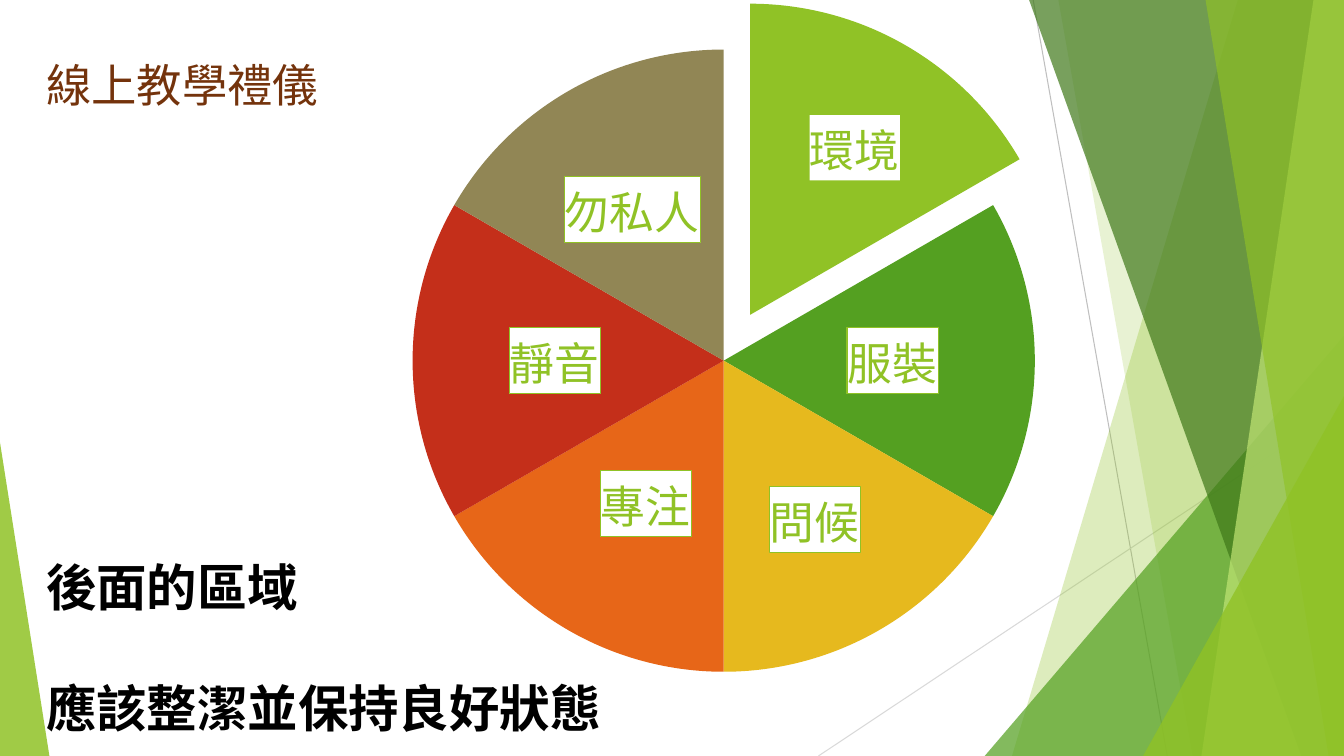
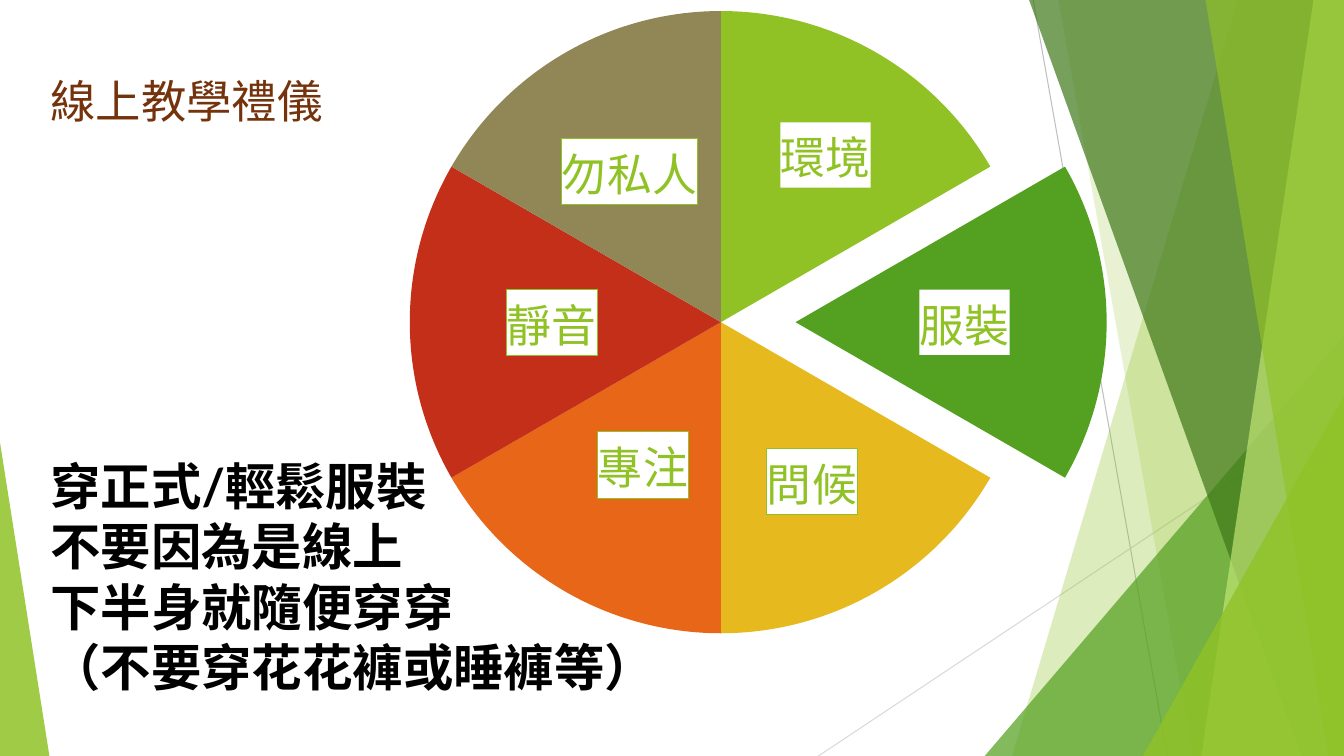
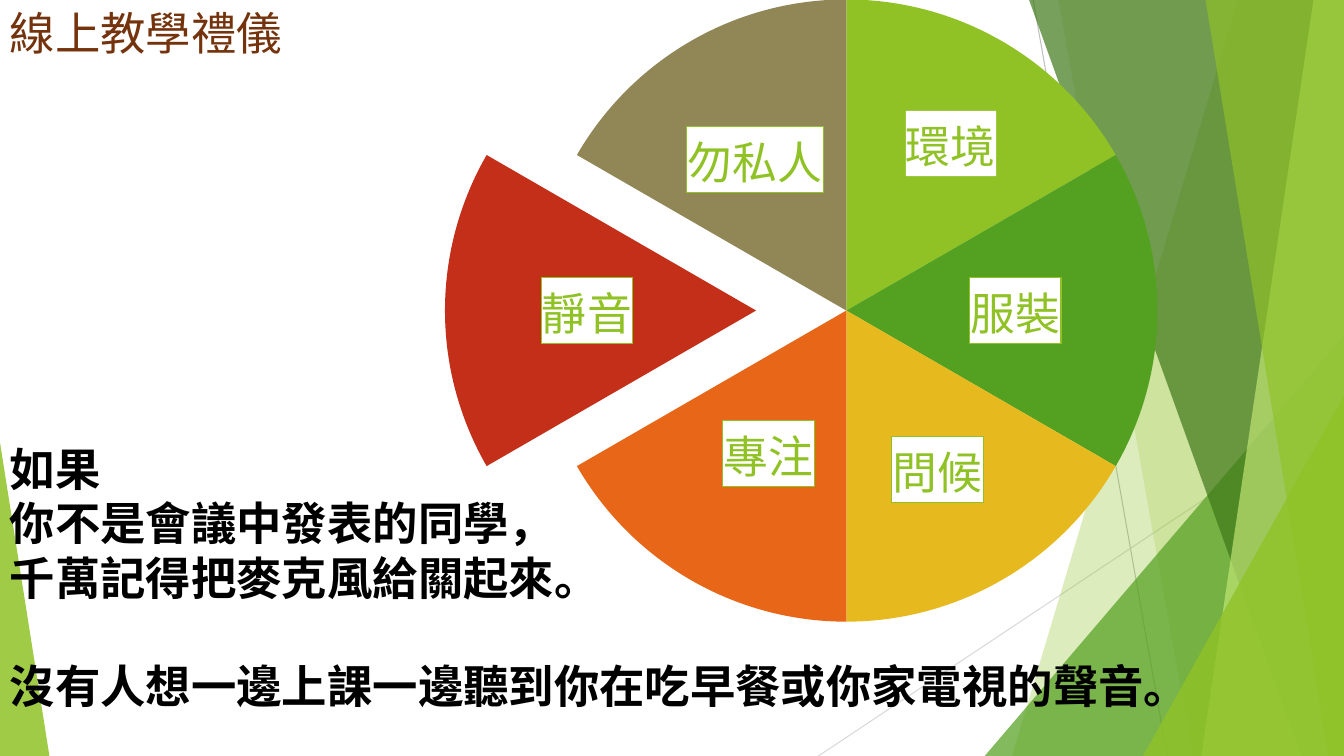
from dataclasses import dataclass
from typing import NamedTuple

from lxml import etree
from pptx import Presentation
from pptx.chart.data import CategoryChartData
from pptx.dml.color import RGBColor
from pptx.enum.chart import XL_CHART_TYPE
from pptx.enum.shapes import MSO_CONNECTOR, MSO_SHAPE
from pptx.enum.text import MSO_ANCHOR, MSO_AUTO_SIZE, PP_ALIGN
from pptx.oxml import parse_xml
from pptx.oxml.ns import nsdecls, qn
from pptx.util import Pt

PIE = XL_CHART_TYPE.PIE
STRAIGHT = MSO_CONNECTOR.STRAIGHT
TRIANGLE = MSO_SHAPE.ISOSCELES_TRIANGLE
TOP = MSO_ANCHOR.TOP
NO_FIT = MSO_AUTO_SIZE.NONE
LEFT = PP_ALIGN.LEFT

WIDTH, HEIGHT = 960, 540
CHART_WIDTH, CHART_HEIGHT = 960, 579
PLOT_WIDTH, PLOT_HEIGHT = 0.463, 0.768
TITLE_ONLY = 5
HEADING = "線上教學禮儀"
SHARE = 17


@dataclass(frozen=True)
class Theme:
    """Colours, font and type sizes of the deck."""
    font: str = "Lato"
    lime: str = "90C226"
    green: str = "54A021"
    forest: str = "3F7819"
    pale: str = "C0E474"
    gold: str = "E6B91E"
    orange: str = "E76618"
    red: str = "C42F1A"
    olive: str = "918655"
    brown: str = "74330C"
    black: str = "000000"
    white: str = "FFFFFF"
    grey: str = "BFBFBF"
    silver: str = "D9D9D9"
    heading_size: float = 32.4
    body_size: float = 36
    label_size: float = 32
    chart_size: float = 10
    leading: float = 1.2


THEME = Theme()


class Ray(NamedTuple):
    """A thin line of the backdrop."""
    start: tuple[float, float]
    end: tuple[float, float]
    colour: str


class Facet(NamedTuple):
    """A band from its slanted edge to the right side of the page."""
    top_x: float
    bottom_x: float
    colour: str
    opacity: int


class Corner(NamedTuple):
    """A triangle standing on the bottom of the page."""
    left: float
    width: float
    height: float
    apex: float
    colour: str
    opacity: int


class Slice(NamedTuple):
    """A pie slice and the shift of its label from the middle."""
    name: str
    colour: str
    shift_x: float
    shift_y: float


class Line(NamedTuple):
    """A line of advice with the number of lines left free above it."""
    text: str
    gap: int = 0


class Topic(NamedTuple):
    """One page: its open slice, chart place and text."""
    opened: int
    explosion: int
    chart_at: tuple[float, float]
    plot_at: tuple[float, float]
    heading_at: tuple[float, float]
    body_top: float
    body_size: float
    lines: tuple[Line, ...]


BACKDROP = (
    Ray((738, 0), (833.8, HEIGHT), THEME.grey),
    Ray((WIDTH, 290.2), (584.6, HEIGHT), THEME.silver),
    Facet(884.2, 722.9, THEME.lime, 30),
    Facet(756, 851.8, THEME.lime, 20),
    Corner(703.4, 256.6, 300.2, 1, THEME.green, 72),
    Facet(735.1, 929.5, THEME.forest, 70),
    Facet(938.2, 858.2, THEME.pale, 70),
    Facet(861.1, 949, THEME.lime, 65),
    Corner(816.5, 143.5, 257, 1, THEME.lime, 80),
    Corner(0, 35.3, 223.9, 0, THEME.lime, 85),
)

SLICES = (
    Slice("環境", THEME.lime, 0.02, -0.04),
    Slice("服裝", THEME.green, 0.01, 0),
    Slice("問候", THEME.gold, 0.01, 0.03),
    Slice("專注", THEME.orange, 0, 0.01),
    Slice("靜音", THEME.red, -0.01, 0),
    Slice("勿私人", THEME.olive, -0.01, -0.02),
)

TOPICS = (
    Topic(0, 17, (0, 0), (0.307, 0.061), (33, 40.5), 397, THEME.body_size, (
        Line("後面的區域"),
        Line("應該整潔並保持良好狀態", gap=1),
    )),
    Topic(1, 24, (-2, -27.5), (0.307, 0.061), (36, 52), 325, THEME.body_size, (
        Line("穿正式/輕鬆服裝"),
        Line("不要因為是線上"),
        Line("下半身就隨便穿穿"),
        Line("（不要穿花花褲或睡褲等）"),
    )),
    Topic(4, 29, (30, -70.5), (0.367, 0.121), (7, 4), 315, THEME.heading_size, (
        Line("如果"),
        Line("你不是會議中發表的同學，"),
        Line("千萬記得把麥克風給關起來。"),
        Line("沒有人想一邊上課一邊聽到你在吃早餐或你家電視的聲音。", gap=1),
    )),
)


def paint(shape, colour: str, opacity: int) -> None:
    """Give a shape a see-through fill without line or shadow."""
    shape.shadow.inherit = False
    shape.fill.solid()
    shape.fill.fore_color.rgb = RGBColor.from_string(colour)
    shape.line.fill.background()
    tint = shape.element.spPr.find(".//" + qn("a:srgbClr"))
    etree.SubElement(tint, qn("a:alpha")).set("val", str(opacity * 1000))


def draw_ray(group, ray: Ray) -> None:
    """Draw one thin line."""
    line = group.shapes.add_connector(STRAIGHT, *map(Pt, ray.start + ray.end))
    line.line.color.rgb = RGBColor.from_string(ray.colour)
    line.line.width = Pt(0.75)
    etree.SubElement(line.element.spPr, qn("a:effectLst"))


def draw_facet(group, facet: Facet) -> None:
    """Draw one slanted band."""
    outline = group.shapes.build_freeform(Pt(facet.top_x), 0)
    corners = ((WIDTH, 0), (WIDTH, HEIGHT), (facet.bottom_x, HEIGHT))
    outline.add_line_segments([(Pt(x), Pt(y)) for x, y in corners], close=True)
    paint(outline.convert_to_shape(), facet.colour, facet.opacity)


def draw_corner(group, corner: Corner) -> None:
    """Draw one corner triangle."""
    shape = group.shapes.add_shape(
        TRIANGLE, Pt(corner.left), Pt(HEIGHT - corner.height),
        Pt(corner.width), Pt(corner.height))
    shape.adjustments[0] = corner.apex
    paint(shape, corner.colour, corner.opacity)


def place_backdrop(page, layout) -> None:
    """Build the backdrop as a group and hand it to the shared layout."""
    painters = {Ray: draw_ray, Facet: draw_facet, Corner: draw_corner}
    group = page.shapes.add_group_shape()
    for part in BACKDROP:
        painters[type(part)](group, part)
    for number, properties in enumerate(group.element.iter(qn("p:cNvPr")), 100):
        properties.set("id", str(number))
    layout.shapes.element.append(group.element)


def add_text(frame, text: str, *, size: float, colour: str,
             bold: bool = False, gap: int = 0, first: bool = False) -> None:
    """Write one line of text as a paragraph."""
    para = frame.paragraphs[0] if first else frame.add_paragraph()
    para.alignment = LEFT
    para.line_spacing = Pt(size * THEME.leading)
    para.space_before = Pt(gap * size * THEME.leading)
    span = para.add_run()
    span.text = text
    span.font.name = THEME.font
    span.font.size = Pt(size)
    span.font.bold = bold
    span.font.color.rgb = RGBColor.from_string(colour)


def prepare_box(box, left: float, top: float, width: float, height: float):
    """Place a text shape, clear its margins and return its text frame."""
    box.left, box.top, box.width, box.height = map(Pt, (left, top, width, height))
    frame = box.text_frame
    frame.word_wrap = True
    frame.auto_size = NO_FIT
    frame.vertical_anchor = TOP
    frame.margin_left = frame.margin_right = 0
    frame.margin_top = frame.margin_bottom = 0
    return frame


def label_xml(number: int, piece: Slice, framed: bool) -> str:
    """Describe the white label of one slice."""
    edge = f'<a:solidFill><a:srgbClr val="{THEME.lime}"/></a:solidFill>' if framed else "<a:noFill/>"
    return f"""<c:dLbl><c:idx val="{number}"/>
      <c:layout><c:manualLayout><c:x val="{piece.shift_x}"/><c:y val="{piece.shift_y}"/></c:manualLayout></c:layout>
      <c:spPr><a:solidFill><a:srgbClr val="{THEME.white}"/></a:solidFill><a:ln w="9525">{edge}</a:ln></c:spPr>
      <c:txPr><a:bodyPr/><a:p><a:pPr><a:defRPr sz="{round(THEME.label_size * 100)}" b="0">
      <a:solidFill><a:srgbClr val="{THEME.lime}"/></a:solidFill><a:latin typeface="{THEME.font}"/>
      </a:defRPr></a:pPr><a:endParaRPr lang="zh-TW"/></a:p></c:txPr>
      <c:dLblPos val="ctr"/>{SHOWN}</c:dLbl>"""


SHOWN = "".join(
    f'<c:show{part} val="{int(part == "CatName")}"/>'
    for part in ("LegendKey", "Val", "CatName", "SerName", "Percent", "BubbleSize"))


def label_slices(chart, opened: int) -> None:
    """Add a label to each slice."""
    labels = "".join(
        label_xml(number, piece, number > 0 and (number, opened) != (1, 1))
        for number, piece in enumerate(SLICES))
    block = parse_xml(
        f'<c:dLbls {nsdecls("c", "a")}>{labels}{SHOWN}<c:showLeaderLines val="0"/></c:dLbls>')
    chart.element.find(".//" + qn("c:cat")).addprevious(block)


def place_plot(chart, left: float, top: float) -> None:
    """Fix the inner plot area inside the chart frame."""
    area = chart.element.find(".//" + qn("c:plotArea"))
    for old in area.findall(qn("c:layout")):
        area.remove(old)
    area.insert(0, parse_xml(
        f'<c:layout {nsdecls("c")}><c:manualLayout><c:layoutTarget val="inner"/>'
        f'<c:xMode val="edge"/><c:yMode val="edge"/><c:x val="{left}"/><c:y val="{top}"/>'
        f'<c:w val="{PLOT_WIDTH}"/><c:h val="{PLOT_HEIGHT}"/></c:manualLayout></c:layout>'))


def add_pie(page, topic: Topic) -> None:
    """Draw the pie with the slice of this topic pulled out."""
    data = CategoryChartData()
    data.categories = [piece.name for piece in SLICES]
    data.add_series("Series 1", [SHARE] * len(SLICES))
    chart = page.shapes.add_chart(
        PIE, *map(Pt, topic.chart_at), Pt(CHART_WIDTH), Pt(CHART_HEIGHT), data).chart
    chart.has_title = False
    chart.has_legend = False
    chart.font.name = THEME.font
    chart.font.size = Pt(THEME.chart_size)
    chart.font.color.rgb = RGBColor.from_string(THEME.black)
    plot = chart.plots[0]
    plot.vary_by_categories = True
    for number, piece in enumerate(SLICES):
        look = plot.series[0].points[number].format
        look.fill.solid()
        look.fill.fore_color.rgb = RGBColor.from_string(piece.colour)
        look.line.fill.background()
    point = chart.element.findall(".//" + qn("c:dPt"))[topic.opened]
    point.find(qn("c:spPr")).addprevious(
        parse_xml(f'<c:explosion {nsdecls("c")} val="{topic.explosion}"/>'))
    label_slices(chart, topic.opened)
    place_plot(chart, *topic.plot_at)


def fill_page(page, topic: Topic) -> None:
    """Put chart, heading and advice on a page."""
    add_pie(page, topic)
    left, top = topic.heading_at
    heading = prepare_box(page.shapes.title, left, top, 250, 40)
    add_text(heading, HEADING, size=THEME.heading_size, colour=THEME.brown, first=True)
    room = HEIGHT - topic.body_top
    box = page.shapes.add_textbox(0, 0, 0, 0)
    body = prepare_box(box, left, topic.body_top, WIDTH - 2 * left, room)
    for number, line in enumerate(topic.lines):
        add_text(body, line.text, size=topic.body_size, colour=THEME.black,
                 bold=True, gap=line.gap, first=number == 0)


def main() -> None:
    """Build the deck and save it."""
    deck = Presentation()
    deck.slide_width, deck.slide_height = Pt(WIDTH), Pt(HEIGHT)
    layout = deck.slide_layouts[TITLE_ONLY]
    pages = [deck.slides.add_slide(layout) for _ in TOPICS]
    place_backdrop(pages[0], layout)
    for page, topic in zip(pages, TOPICS):
        fill_page(page, topic)
    deck.save("out.pptx")


if __name__ == "__main__":
    main()
